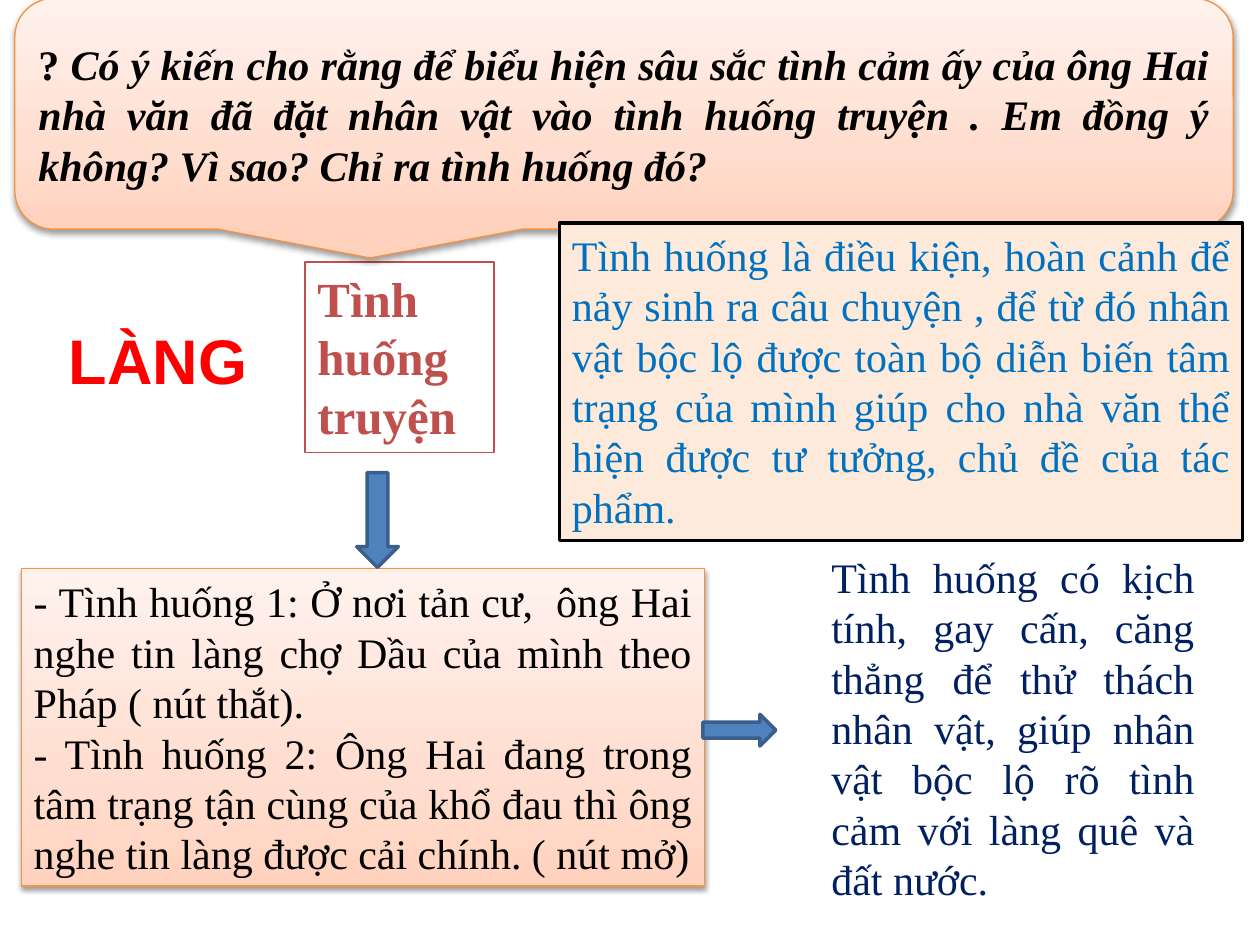
import copy
import pptx
import pptx.util
import pptx.oxml
import pptx.oxml.ns
import pptx.dml.color
import pptx.enum.shapes
import pptx.enum.text

Cm, Pt = pptx.util.Cm, pptx.util.Pt
Kind = pptx.enum.shapes.MSO_SHAPE
Align = pptx.enum.text.PP_ALIGN
Anchor = pptx.enum.text.MSO_ANCHOR
Fit = pptx.enum.text.MSO_AUTO_SIZE
SERIF = "Times New Roman"
PEACH = [(0, "FFD2BD"), (0.35, "FFDED0"), (1, "FFF2ED")]
SHADOW = (
    f'<a:outerShdw {pptx.oxml.ns.nsdecls("a")} blurRad="39370" dist="20320" '
    'dir="5400000" rotWithShape="0"><a:srgbClr val="000000">'
    '<a:alpha val="38000"/></a:srgbClr></a:outerShdw>'
)


def rgb(code):
    return pptx.dml.color.RGBColor.from_string(code)


def write(shape, lines, color, size=24, bold=False, align=Align.JUSTIFY,
          anchor=Anchor.TOP, font=SERIF, fit=Fit.SHAPE_TO_FIT_TEXT):
    frame = shape.text_frame
    frame.text = "\n".join(lines)
    frame.word_wrap = True
    frame.auto_size = fit
    frame.vertical_anchor = anchor
    for para in frame.paragraphs:
        para.alignment = align
        para.font.name = font
        para.font.size = Pt(size)
        para.font.bold = bold
        para.font.color.rgb = rgb(color)


deck = pptx.Presentation()
deck.slide_width, deck.slide_height = Cm(25.4), Cm(19.05)
slide = deck.slides.add_slide(deck.slide_layouts[5])

# Title
title = slide.shapes.title
title.left, title.top, title.width, title.height = Cm(0.43), Cm(6.35), Cm(5.51), Cm(1.07)
write(title, ["LÀNG"], "FF0000", 36, True, Align.CENTER, font="Arial", fit=Fit.NONE)
title.text_frame.word_wrap = False

# Boxes and arrows: kind, place in cm, fill, line colour, line width
parts = {
    "topic": (Kind.RECTANGLE, (6.15, 5.28, 3.81, 3.84), "FFFFFF", "C0504D", 0.75),
    "question": (Kind.ROUNDED_RECTANGULAR_CALLOUT, (0.3, -0.03, 24.56, 4.65),
                 PEACH, "F69240", 0.75),
    "meaning": (Kind.RECTANGLE, (11.28, 4.5, 13.77, 6.4), "FDEADA", "000000", 2),
    "cases": (Kind.RECTANGLE, (0.43, 11.46, 13.77, 6.4), PEACH, "F69240", 0.75),
    "down": (Kind.DOWN_ARROW, (7.19, 9.53, 0.84, 1.91), "4F81BD", "3A5F8C", 2),
    "right": (Kind.RIGHT_ARROW, (14.17, 14.4, 1.47, 0.64), "4F81BD", "3A5F8C", 2),
}
made = {}
for name, (kind, place, fill, line, width) in parts.items():
    shape = slide.shapes.add_shape(kind, *map(Cm, place))
    shape.shadow.inherit = False
    shape.line.color.rgb = rgb(line)
    shape.line.width = Pt(width)
    if fill is PEACH:
        # Three-stop gradient, dark at the foot, with a soft shadow
        shape.fill.gradient()
        shape.fill.gradient_angle = 90
        stops = shape.element.xpath(".//a:gsLst")[0]
        stops.append(copy.deepcopy(stops[0]))
        for stop, (spot, color) in zip(shape.fill.gradient_stops, PEACH):
            stop.position = spot
            stop.color.rgb = rgb(color)
        glow = shape.element.xpath("./p:spPr/a:effectLst")[0]
        glow.append(pptx.oxml.parse_xml(SHADOW))
    else:
        shape.fill.solid()
        shape.fill.fore_color.rgb = rgb(fill)
    made[name] = shape

# Texts in the boxes
write(made["topic"], ["Tình", "huống", "truyện"], "C0504D", 28, True, Align.LEFT)
write(made["question"], ["? "], "000000", bold=True, anchor=Anchor.MIDDLE, fit=Fit.NONE)
run = made["question"].text_frame.paragraphs[0].add_run()
run.text = (
    "Có ý kiến cho rằng để biểu hiện sâu sắc tình cảm ấy của ông Hai nhà văn đã "
    "đặt nhân vật vào tình huống truyện . Em đồng ý không? Vì sao? "
    "Chỉ ra tình huống đó?"
)
run.font.italic = True
write(made["meaning"], [
    "Tình huống là điều kiện, hoàn cảnh để nảy sinh ra câu chuyện , để từ đó nhân "
    "vật bộc lộ được toàn bộ diễn biến tâm trạng của mình giúp cho nhà văn thể "
    "hiện được tư tưởng, chủ đề của tác phẩm.",
], "0070C0")
write(made["cases"], [
    "- Tình huống 1: Ở nơi tản cư,  ông Hai nghe tin làng chợ Dầu của mình theo "
    "Pháp ( nút thắt).",
    "- Tình huống 2: Ông Hai đang trong tâm trạng tận cùng của khổ đau thì ông "
    "nghe tin làng được cải chính. ( nút mở)",
], "000000", anchor=Anchor.MIDDLE)

# Conclusion
end = slide.shapes.add_textbox(Cm(16.51), Cm(10.95), Cm(7.82), Cm(7.44))
write(end, [
    "Tình huống có kịch tính, gay cấn, căng thẳng để thử thách nhân vật, giúp nhân "
    "vật bộc lộ rõ tình cảm với làng quê và đất nước.",
], "002060", anchor=Anchor.MIDDLE)

deck.save("out.pptx")
